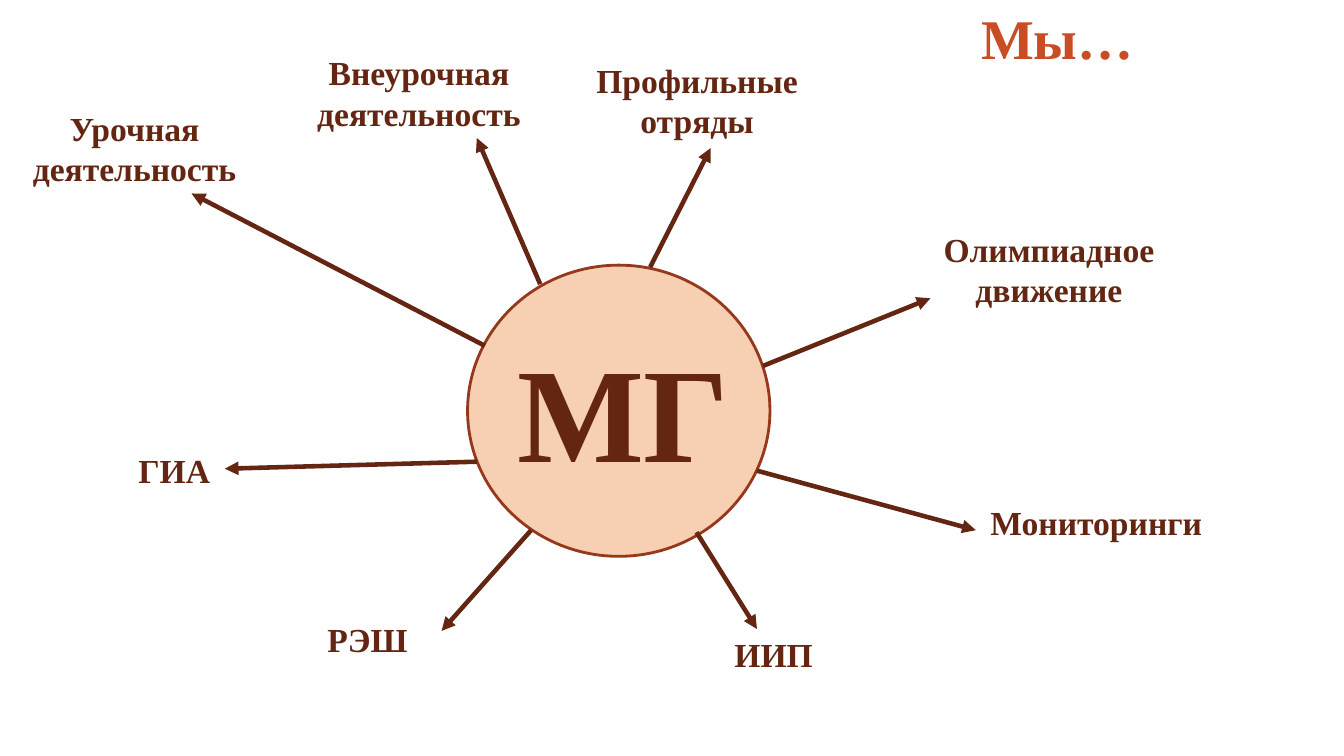
from pptx import Presentation
from pptx import util as u
from pptx.dml.color import RGBColor
from pptx.enum import shapes, text
from pptx.oxml.ns import qn
from lxml import etree

COLORS = {"title": "C94C25", "dark": "642613", "rim": "95381B", "peach": "F7CFB3"}


class MindMap:
    font_name = "Times New Roman"
    arrow_width = 3.25

    def __init__(self, slide):
        self.slide = slide

    def color(self, name):
        return RGBColor.from_string(COLORS[name])

    def set_words(self, frame, words, size, color):
        frame.word_wrap = True
        paragraph = frame.paragraphs[0]
        paragraph.text = words
        paragraph.alignment = text.PP_ALIGN.CENTER
        font = paragraph.font
        font.name, font.size, font.bold = self.font_name, u.Pt(size), True
        font.color.rgb = self.color(color)
        return paragraph

    def title(self, words, left, top, width, height):
        heading = self.slide.shapes.title
        heading.left, heading.top = u.Pt(left), u.Pt(top)
        heading.width, heading.height = u.Pt(width), u.Pt(height)
        frame = heading.text_frame
        frame.auto_size = text.MSO_AUTO_SIZE.NONE
        frame.vertical_anchor = text.MSO_ANCHOR.MIDDLE
        frame.margin_left = frame.margin_right = 0
        properties = self.set_words(frame, words, 40, "title")._p.get_or_add_pPr()
        properties.set("marL", str(u.Pt(14.4)))
        properties.set("indent", "0")

    def hub(self, left, top, width, height):
        circle = self.slide.shapes.add_shape(
            shapes.MSO_SHAPE.OVAL, u.Pt(left), u.Pt(top), u.Pt(width), u.Pt(height))
        circle.shadow.inherit = False
        circle.fill.solid()
        circle.fill.fore_color.rgb = self.color("peach")
        circle.line.color.rgb = self.color("rim")
        circle.line.width = u.Pt(2)

    def label(self, words, left, top, width, height, size=24):
        box = self.slide.shapes.add_textbox(
            u.Pt(left), u.Pt(top), u.Pt(width), u.Pt(height))
        box.text_frame.auto_size = text.MSO_AUTO_SIZE.SHAPE_TO_FIT_TEXT
        self.set_words(box.text_frame, words, size, "dark")

    def arrow(self, start, end):
        ray = self.slide.shapes.add_connector(
            shapes.MSO_CONNECTOR.STRAIGHT, *(u.Pt(value) for value in start + end))
        ray.line.color.rgb = self.color("dark")
        ray.line.width = u.Pt(self.arrow_width)
        properties = ray._element.spPr
        etree.SubElement(properties.find(qn("a:ln")), qn("a:tailEnd"), type="triangle")
        etree.SubElement(properties, qn("a:effectLst"))


ONE_LINE, TWO_LINES = 36, 65.5
DIRECTIONS = [
    ("Урочная деятельность", (3.6, 73.4, 185, TWO_LINES), (346.3, 247), (136.8, 138.2)),
    ("Внеурочная деятельность", (203.8, 33.8, 190.8, TWO_LINES), (385.9, 203), (340.6, 98.6)),
    ("Профильные отряды", (402.5, 38.9, 190.8, TWO_LINES), (464.4, 190.8), (507.6, 105.8)),
    ("Олимпиадное движение", (653.8, 159.8, 190.8, TWO_LINES), (545, 261.4), (664.6, 213.1)),
    ("Мониторинги", (687.6, 355, 190.8, ONE_LINE), (540.7, 336.2), (697, 378.7)),
    ("ИИП", (507.6, 449.3, 90, ONE_LINE), (497.5, 380.2), (540.7, 449.3)),
    ("РЭШ", (196.6, 438.5, 131.8, ONE_LINE), (379.4, 378.7), (315.4, 450.7)),
    ("ГИА", (62.6, 318.2, 123.8, ONE_LINE), (340.6, 329.8), (160.6, 334.8)),
]


def main():
    deck = Presentation()
    deck.slide_width, deck.slide_height = u.Pt(960), u.Pt(540)
    mind_map = MindMap(deck.slides.add_slide(deck.slide_layouts[5]))
    mind_map.title("Мы…", 627, 0, 242, 53.3)
    mind_map.hub(334, 189.4, 216, 208)
    mind_map.label("МГ", 340.5, 231, 209.5, 124, size=96)
    for words, place, start, end in DIRECTIONS:
        mind_map.arrow(start, end)
        mind_map.label(words, *place)
    deck.save("out.pptx")


if __name__ == "__main__":
    main()
